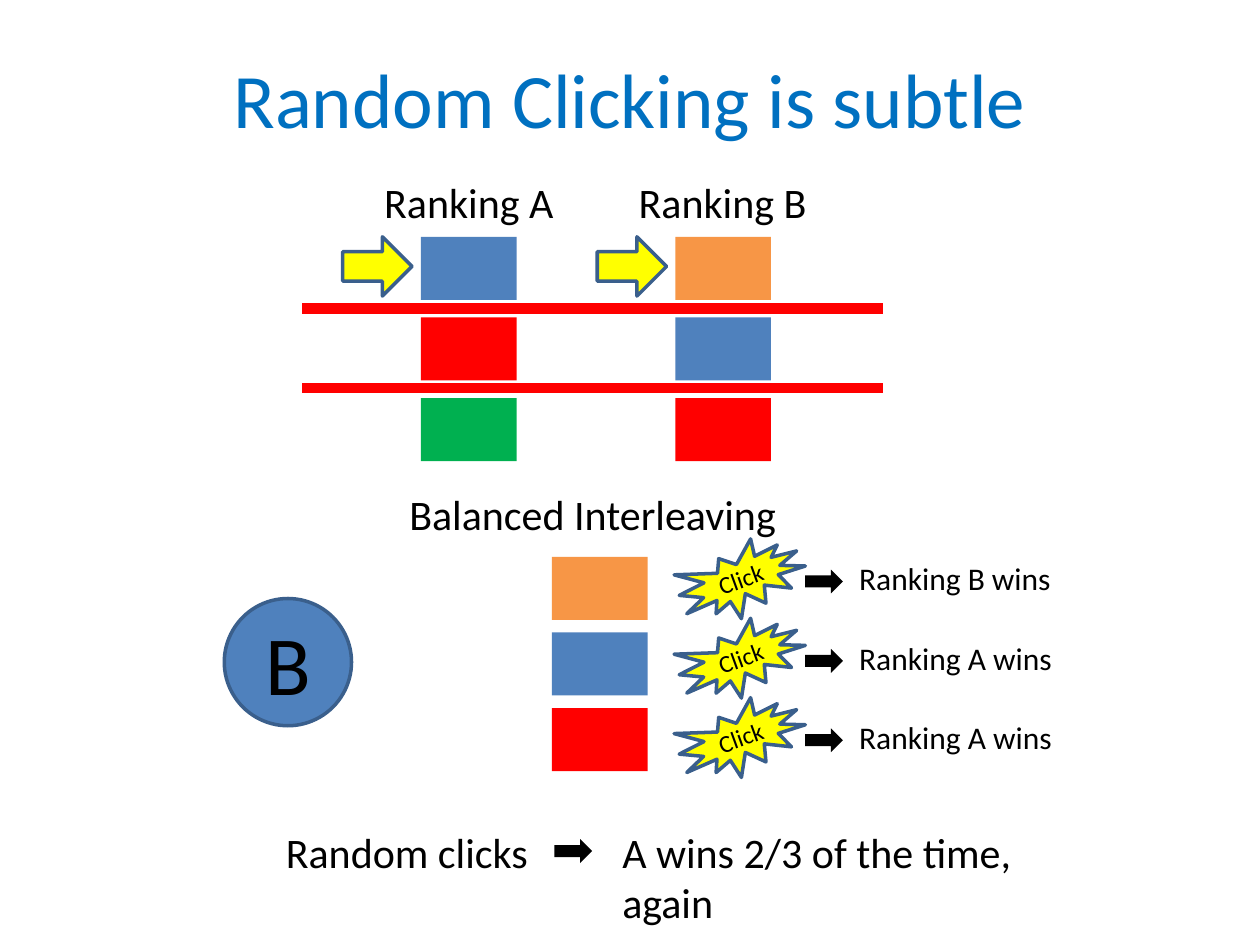
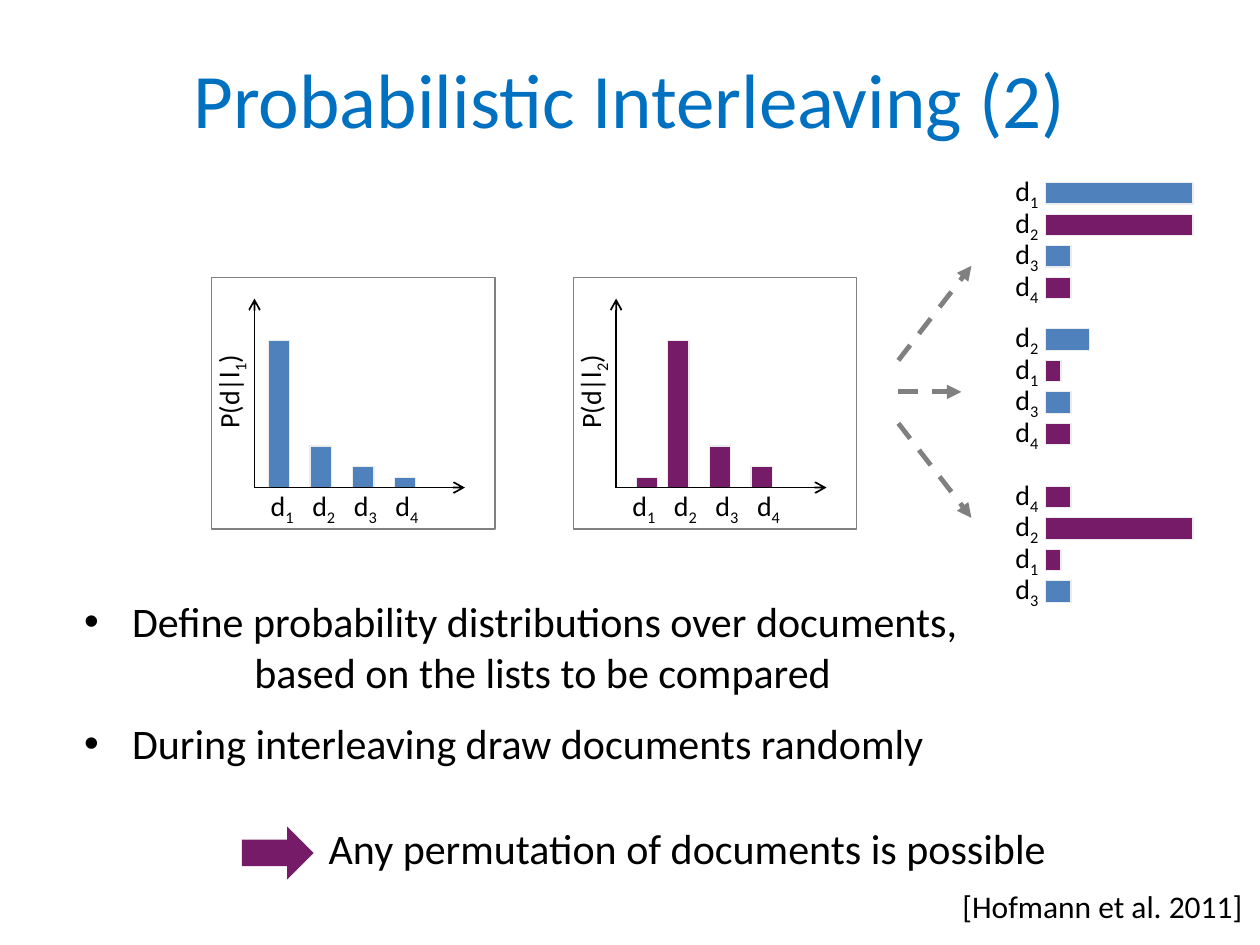
"""Build two slides on balanced and probabilistic interleaving."""
from dataclasses import dataclass

from lxml.etree import SubElement
from pptx import Presentation
from pptx.dml.color import RGBColor as RGB
from pptx.enum.dml import MSO_LINE
from pptx.enum.shapes import MSO_CONNECTOR, MSO_SHAPE as SHAPE
from pptx.enum.text import MSO_ANCHOR as ANCHOR, PP_ALIGN as ALIGN
from pptx.oxml.ns import qn
from pptx.util import Inches, Pt


@dataclass(frozen=True)
class Theme:
    font: str = "Calibri"
    title: str = "0070C0"
    ink: str = "000000"
    paper: str = "FFFFFF"
    blue: str = "4F81BD"
    outline: str = "3A5F8C"
    orange: str = "F79646"
    red: str = "FF0000"
    green: str = "00B050"
    yellow: str = "FFFF00"
    purple: str = "751B68"
    grey: str = "808080"
    bar_edge: str = "EBEDED"
    title_size: int = 44
    badge_size: int = 48
    body_size: int = 24
    note_size: int = 18
    label_size: int = 16
    click_size: int = 14


theme = Theme()


def add_item(slide, box, text="", size=theme.body_size, color=theme.ink, align=ALIGN.LEFT,
             preset=None, fill=None, edge=None, edge_width=2, anchor=ANCHOR.TOP):
    """Add a preset shape or a text box; underscores switch subscript on and off."""
    bounds = [Inches(length) for length in box]
    if preset is None:
        item = slide.shapes.add_textbox(*bounds)
    else:
        item = slide.shapes.add_shape(preset, *bounds)
        item.shadow.inherit = False
        item.fill.solid()
        item.fill.fore_color.rgb = RGB.from_string(fill)
        if edge:
            item.line.color.rgb = RGB.from_string(edge)
            item.line.width = Pt(edge_width)
        else:
            item.line.fill.background()
    if text:
        frame = item.text_frame
        frame.word_wrap = False
        frame.vertical_anchor = anchor
        paragraph = frame.paragraphs[0]
        paragraph.alignment = align
        paragraph.font.name = theme.font
        paragraph.font.size = Pt(size)
        paragraph.font.color.rgb = RGB.from_string(color)
        for index, part in enumerate(text.split("_")):
            run = paragraph.add_run()
            run.text = part
            if index % 2:
                run._r.get_or_add_rPr().set("baseline", "-25000")
    return item


def add_line(slide, start, end, color, width, head=None, dash=None):
    """Add a straight line, with an arrowhead at its end if one is named."""
    ends = [Inches(length) for length in (*start, *end)]
    line = slide.shapes.add_connector(MSO_CONNECTOR.STRAIGHT, *ends)
    line.line.color.rgb = RGB.from_string(color)
    line.line.width = Pt(width)
    if dash:
        line.line.dash_style = dash
    if head:
        SubElement(line.line._get_or_add_ln(), qn("a:tailEnd"), type=head)
    SubElement(line._element.spPr, qn("a:effectLst"))


deck = Presentation()
deck.slide_width, deck.slide_height = Inches(10), Inches(7.5)
slides = []
for title in ("Random Clicking is subtle", "Probabilistic Interleaving (2)"):
    slide = deck.slides.add_slide(deck.slide_layouts[6])
    add_item(slide, (0.5, 0.3, 9, 0.95), title, theme.title_size, theme.title,
             ALIGN.CENTER, anchor=ANCHOR.MIDDLE)
    slides.append(slide)
clicking, probabilistic = slides

rankings = [
    ("Ranking A", 3.34, 2.95, (theme.blue, theme.red, theme.green)),
    ("Ranking B", 5.36, 4.97, (theme.orange, theme.blue, theme.red)),
]
for name, left, name_left, documents in rankings:
    add_item(clicking, (name_left, 1.35, 1.55, 0.5), name)
    add_item(clicking, (left - 0.62, 1.88, 0.55, 0.47), preset=SHAPE.RIGHT_ARROW,
             fill=theme.yellow, edge=theme.outline)
    for rank, color in enumerate(documents):
        add_item(clicking, (left, 1.88 + 0.64 * rank, 0.76, 0.5),
                 preset=SHAPE.RECTANGLE, fill=color)
for cutoff in (2.45, 3.08):
    add_line(clicking, (2.4, cutoff), (7.01, cutoff), theme.red, 6)

add_item(clicking, (3.15, 3.83, 3.14, 0.5), "Balanced Interleaving")
outcomes = [(theme.orange, "Ranking B wins"), (theme.blue, "Ranking A wins"),
            (theme.red, "Ranking A wins")]
for rank, (color, outcome) in enumerate(outcomes):
    click_top = 4.32 + 0.63 * rank
    add_item(clicking, (4.38, 4.42 + 0.6 * rank, 0.76, 0.5),
             preset=SHAPE.RECTANGLE, fill=color)
    click = add_item(clicking, (5.38, click_top, 1.02, 0.57), "Click", theme.click_size,
                     align=ALIGN.CENTER, preset=SHAPE.EXPLOSION1, fill=theme.yellow,
                     edge=theme.outline, anchor=ANCHOR.MIDDLE)
    click.rotation = 340
    add_item(clicking, (6.39, click_top + 0.2, 0.3, 0.19),
             preset=SHAPE.RIGHT_ARROW, fill=theme.ink)
    add_item(clicking, (6.72, click_top + 0.07, 1.75, 0.4), outcome, theme.note_size)

add_item(clicking, (2.17, 6.51, 2.12, 0.5), "Random clicks")
add_item(clicking, (4.4, 6.66, 0.3, 0.19), preset=SHAPE.RIGHT_ARROW, fill=theme.ink)
add_item(clicking, (4.84, 6.51, 4.08, 0.5), "A wins 2/3 of the time, again")
add_item(clicking, (1.78, 4.75, 1.01, 1.01), "B", theme.badge_size, align=ALIGN.CENTER,
         preset=SHAPE.OVAL, fill=theme.blue, edge=theme.outline, anchor=ANCHOR.MIDDLE)

axis_bottom = 3.87
distributions = [
    ("P(d|l_1_)", 1.68, theme.blue, (0.45, 0.78, 1.12, 1.45), (1.17, 0.33, 0.17, 0.08)),
    ("P(d|l_2_)", 4.55, theme.purple, (0.5, 0.75, 1.08, 1.41), (0.08, 1.17, 0.33, 0.17)),
]
for axis_name, left, color, offsets, heights in distributions:
    add_item(probabilistic, (left, 2.2, 2.25, 2), preset=SHAPE.RECTANGLE,
             fill=theme.paper, edge=theme.grey, edge_width=0.75)
    axis_label = add_item(probabilistic, (left - 0.05, 2.78, 0.47, 0.72), axis_name,
                          theme.label_size)
    axis_label.text_frame._txBody.bodyPr.set("vert", "vert270")
    for index, (offset, height) in enumerate(zip(offsets, heights)):
        add_item(probabilistic, (left + offset, axis_bottom - height, 0.17, height),
                 preset=SHAPE.RECTANGLE, fill=color, edge=theme.bar_edge, edge_width=0.75)
        add_item(probabilistic, (left + 0.37 + 0.33 * index, 3.83, 0.41, 0.37),
                 f"d_{index + 1}", theme.label_size)
    origin = (left + 0.34, axis_bottom)
    for tip in ((left + 0.34, 2.37), (left + 2.01, axis_bottom)):
        add_line(probabilistic, origin, tip, theme.ink, 1, "arrow")

permutations = [
    (1.45, [(1, theme.blue, 1.17), (2, theme.purple, 1.17),
            (3, theme.blue, 0.2), (4, theme.purple, 0.2)]),
    (2.61, [(2, theme.blue, 0.35), (1, theme.purple, 0.12),
            (3, theme.blue, 0.2), (4, theme.purple, 0.2)]),
    (3.86, [(4, theme.purple, 0.2), (2, theme.purple, 1.17),
            (1, theme.purple, 0.12), (3, theme.blue, 0.2)]),
]
for first_top, documents in permutations:
    for rank, (number, color, probability) in enumerate(documents):
        top = first_top + 0.25 * rank
        add_item(probabilistic, (8.3, top, probability, 0.17), preset=SHAPE.RECTANGLE,
                 fill=color, edge=theme.bar_edge, edge_width=0.75)
        add_item(probabilistic, (7.96, top - 0.12, 0.41, 0.37), f"d_{number}",
                 theme.label_size)
for start_y, tip in ((2.86, (7.71, 2.11)), (3.11, (7.63, 3.11)), (3.36, (7.71, 4.11))):
    add_line(probabilistic, (7.13, start_y), tip, theme.grey, 2.75, "triangle", MSO_LINE.DASH)

points = [
    ("Define probability distributions over documents,", 0.38, True, 6, 0),
    ("based on the lists to be compared", 1.35, False, 0, 6),
    ("During interleaving draw documents randomly", 0.38, True, 6, 6),
]
explanation = probabilistic.shapes.add_textbox(
    Inches(0.57), Inches(4.68), Inches(8.42), Inches(1.25)).text_frame
explanation.word_wrap = True
for index, (point, margin, bulleted, before, after) in enumerate(points):
    paragraph = explanation.add_paragraph() if index else explanation.paragraphs[0]
    paragraph.text = point
    paragraph.space_before, paragraph.space_after = Pt(before), Pt(after)
    paragraph.font.name = theme.font
    paragraph.font.size = Pt(theme.body_size)
    paragraph.font.color.rgb = RGB.from_string(theme.ink)
    properties = paragraph._p.get_or_add_pPr()
    properties.set("marL", str(Inches(margin)))
    if bulleted:
        properties.set("indent", str(-Inches(margin)))
        bullet_font = properties.makeelement(qn("a:buFont"), typeface="Arial")
        bullet = properties.makeelement(qn("a:buChar"), char="•")
        properties.find(qn("a:defRPr")).addprevious(bullet_font)
        bullet_font.addnext(bullet)

add_item(probabilistic, (1.92, 6.56, 0.57, 0.42), preset=SHAPE.RIGHT_ARROW, fill=theme.purple)
add_item(probabilistic, (2.51, 6.48, 5.95, 0.5), "Any permutation of documents is possible")
add_item(probabilistic, (7.54, 6.99, 2.45, 0.4), "[Hofmann et al. 2011]", theme.note_size)

deck.save("out.pptx")
